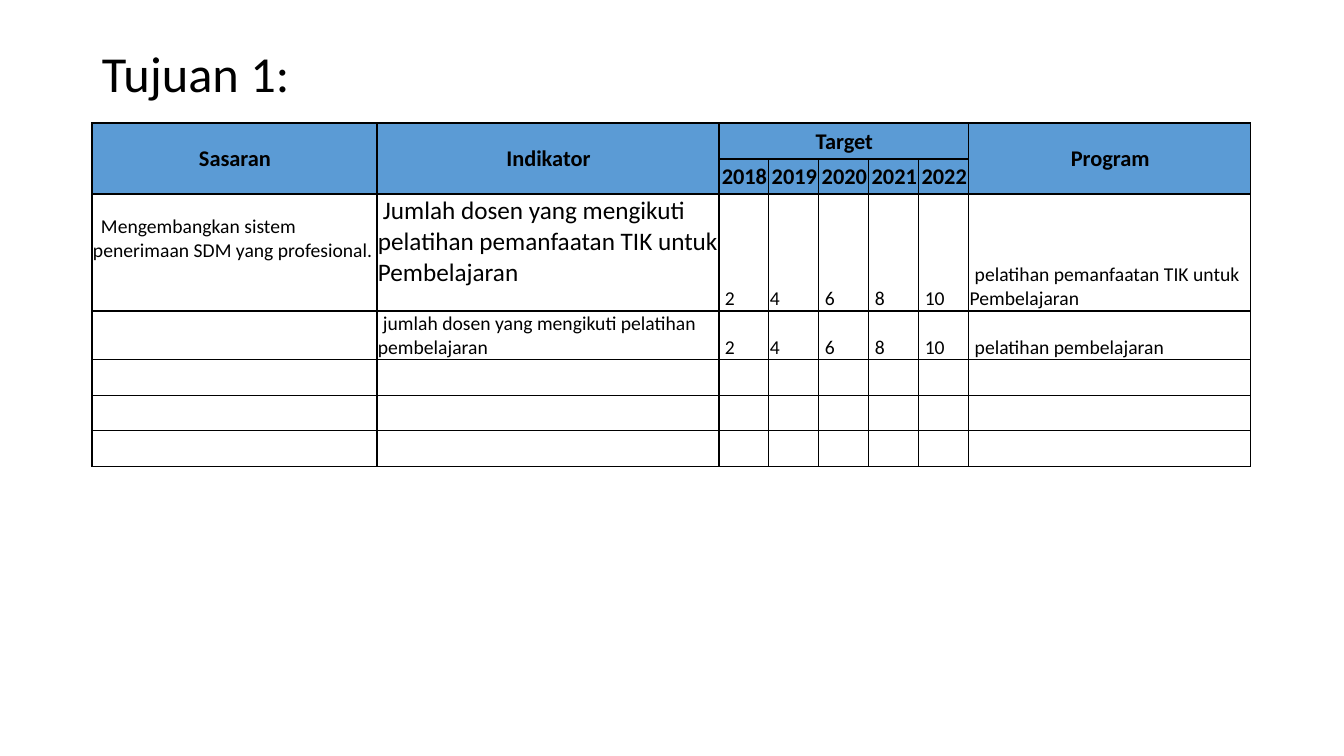
from lxml import etree
from pptx import Presentation
from pptx import util as u
from pptx.dml.color import RGBColor
from pptx.enum import text as t
from pptx.oxml.ns import qn

PX = 914400 / 100.8
BLACK = RGBColor(0x00, 0x00, 0x00)
BLUE = RGBColor(0x5B, 0x9B, 0xD5)

LEFT, TOP = 92, 123
COLS = [285, 342] + [50] * 5 + [282]
ROWS = [36, 35, 117, 49, 36, 35, 36]
HEADS = {0: "Sasaran", 1: "Indikator", 2: "Target", 7: "Program"}
YEARS = range(2018, 2023)
TARGETS = ["2", "4", "6", "8", "10"]
BODY = [
    ["Mengembangkan sistem penerimaan SDM yang profesional.",
     "Jumlah dosen yang mengikuti pelatihan pemanfaatan TIK untuk Pembelajaran",
     *TARGETS, "pelatihan pemanfaatan TIK untuk Pembelajaran"],
    ["", "jumlah dosen yang mengikuti pelatihan pembelajaran",
     *TARGETS, "pelatihan pembelajaran"],
]
HEAD = {"size": u.Pt(16), "bold": True}
PLAIN = {"size": u.Pt(14), "bold": False}
LARGE = {"size": u.Pt(18), "bold": False}


def px(n):
    return u.Emu(round(n * PX))


def assign(obj, vals):
    for name, val in vals.items():
        setattr(obj, name, val)


def write(para, words, font):
    run = para.add_run()
    run.text = words
    assign(run.font, {"name": "Calibri", **font})
    run.font.color.rgb = BLACK


def title(slide, words):
    box = slide.shapes.add_textbox(px(LEFT), px(40), px(sum(COLS)), px(72))
    frame = box.text_frame
    assign(frame, {"word_wrap": True, "vertical_anchor": t.MSO_ANCHOR.MIDDLE})
    para = frame.paragraphs[0]
    para.line_spacing = 0.9
    write(para, words, {"size": u.Pt(36)})


def border(cell):
    """Draw a thin black line on all four sides of a cell."""
    props = cell._tc.get_or_add_tcPr()
    for side in ("lnL", "lnR", "lnT", "lnB"):
        line = etree.SubElement(props, qn(f"a:{side}"), w=str(u.Pt(1)))
        fill = etree.SubElement(line, qn("a:solidFill"))
        etree.SubElement(fill, qn("a:srgbClr"), val=str(BLACK))


def head(cell, words):
    cell.vertical_anchor = t.MSO_ANCHOR.MIDDLE
    para = cell.text_frame.paragraphs[0]
    para.alignment = t.PP_ALIGN.CENTER
    write(para, words, HEAD)


def body(cell, words, font=PLAIN, indent=5, below=0):
    """Fill a cell from the bottom up, leaving a gap below in px."""
    assign(cell, {"vertical_anchor": t.MSO_ANCHOR.BOTTOM,
                  "margin_bottom": px(below)})
    para = cell.text_frame.paragraphs[0]
    para._p.get_or_add_pPr().set("indent", str(px(indent)))
    write(para, words, font)


def grid(slide):
    """Add the table with its sizes, borders and fills, still without text."""
    table = slide.shapes.add_table(
        len(ROWS), len(COLS), px(LEFT), px(TOP),
        px(sum(COLS)), px(sum(ROWS))).table
    assign(table, {"first_row": False, "horz_banding": False})
    for col, width in zip(table.columns, COLS):
        col.width = px(width)
    for row, height in zip(table.rows, ROWS):
        row.height = px(height)
    for r in range(len(ROWS)):
        for c in range(len(COLS)):
            cell = table.cell(r, c)
            assign(cell, {"margin_left": px(1), "margin_right": 0,
                          "margin_top": px(1), "margin_bottom": 0})
            border(cell)
            if r < 2:
                cell.fill.solid()
                cell.fill.fore_color.rgb = BLUE
            else:
                cell.fill.background()
    return table


def fill(table):
    for c, words in HEADS.items():
        end = (0, 6) if words == "Target" else (1, c)
        table.cell(0, c).merge(table.cell(*end))
        head(table.cell(0, c), words)
    for c, year in enumerate(YEARS, 2):
        head(table.cell(1, c), str(year))
    looks = {(2, 0): {"indent": 8, "below": 48},
             (2, 1): {"font": LARGE, "below": 23},
             (2, 3): {"indent": 0}, (3, 3): {"indent": 0}}
    for r, row in enumerate(BODY, 2):
        for c, words in enumerate(row):
            if words:
                body(table.cell(r, c), words, **looks.get((r, c), {}))


def main():
    deck = Presentation()
    assign(deck, {"slide_width": px(1344), "slide_height": px(756)})
    slide = deck.slides.add_slide(deck.slide_layouts[6])
    title(slide, "Tujuan 1:")
    fill(grid(slide))
    deck.save("out.pptx")


if __name__ == "__main__":
    main()
